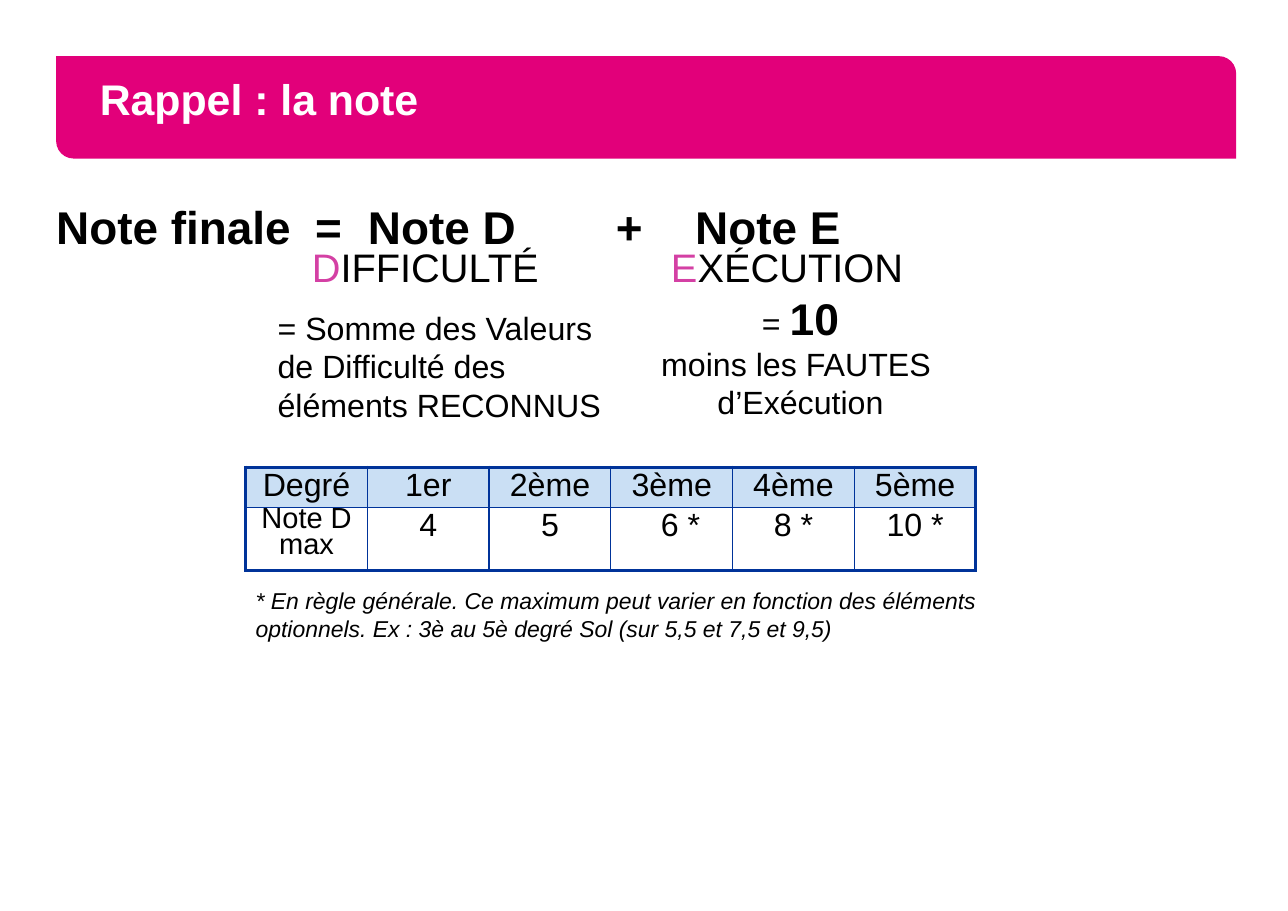
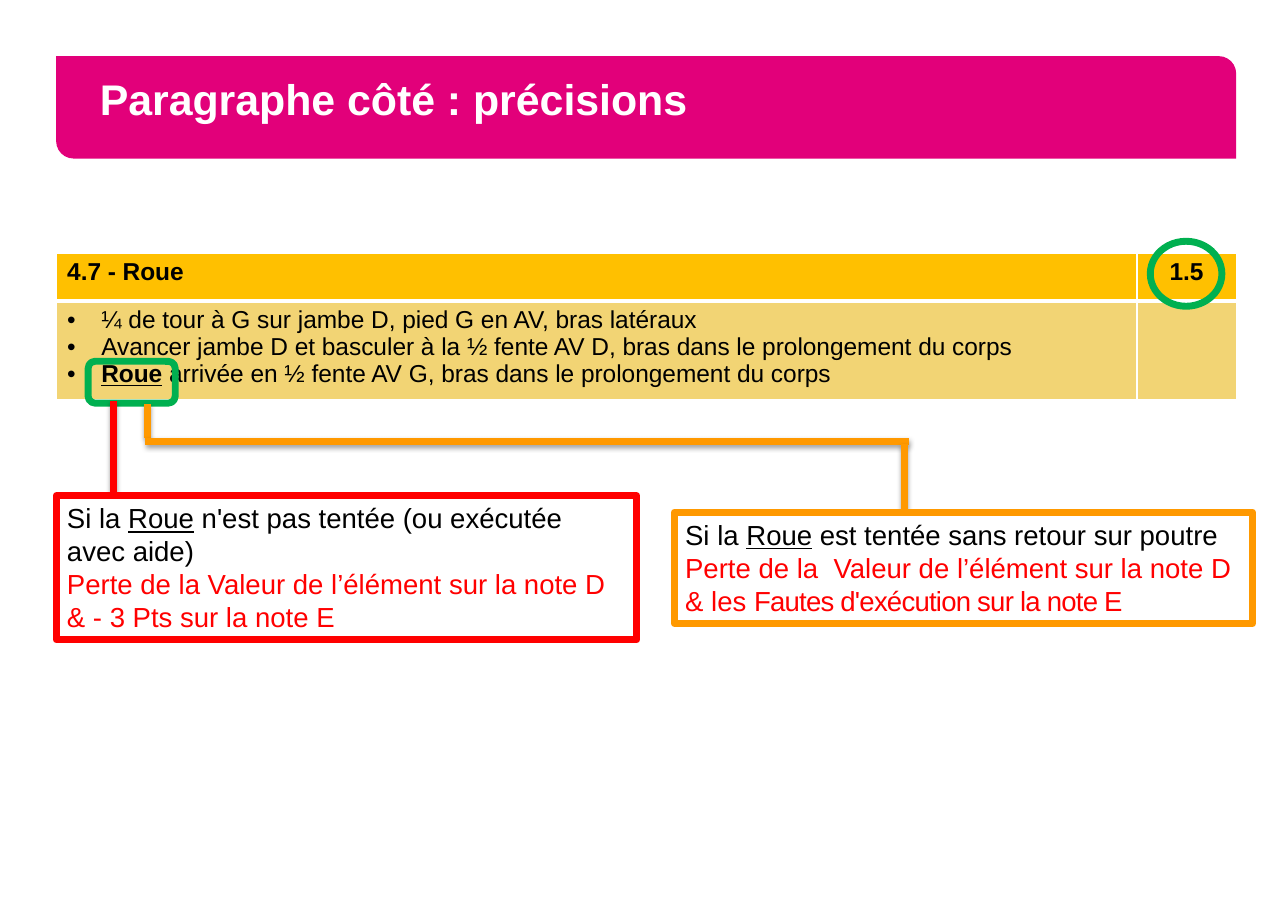
from dataclasses import dataclass, field

from lxml.etree import SubElement
from pptx import Presentation
from pptx.dml.color import RGBColor
from pptx.enum.shapes import MSO_CONNECTOR, MSO_SHAPE
from pptx.enum.text import MSO_ANCHOR, PP_ALIGN
from pptx.oxml.ns import qn
from pptx.util import Inches, Pt


# Theme
@dataclass(frozen=True)
class Theme:
    font: str = "Arial"
    black: str = "000000"
    white: str = "FFFFFF"
    band: str = "E2007A"
    initial: str = "D440A4"
    grid: str = "003399"
    degree_fill: str = "CADFF4"
    element_header: str = "FFC000"
    element_body: str = "F2D474"
    highlight: str = "00B050"
    red: str = "FF0000"
    orange: str = "FF9900"
    title_size: float = 28
    formula_size: float = 30
    term_size: float = 26
    ten_size: float = 29
    body_size: float = 21
    narrow_size: float = 19
    callout_size: float = 18
    element_size: float = 16
    note_size: float = 15
    outline: float = 4.5


THEME = Theme()


# Content types
@dataclass(frozen=True)
class Box:
    left: float
    top: float
    width: float
    height: float

    def lengths(self) -> tuple:
        return tuple(Inches(v) for v in (self.left, self.top, self.width, self.height))


@dataclass(frozen=True)
class Run:
    text: str
    format: dict = field(default_factory=dict)


@dataclass(frozen=True)
class Line:
    runs: tuple[Run, ...]
    align: PP_ALIGN = PP_ALIGN.LEFT
    spacing: object = None
    tabs: tuple[float, ...] = ()
    bullet: bool = False


@dataclass(frozen=True)
class Cell:
    lines: tuple[Line, ...] = ()
    fill: str | None = None
    left_margin: float | None = None


@dataclass(frozen=True)
class Grid:
    color: str
    outer: float
    vertical: float
    horizontal: float


def line(text: str, align: PP_ALIGN = PP_ALIGN.LEFT, spacing=None, bullet: bool = False,
         **text_format) -> Line:
    return Line((Run(text, text_format),), align, spacing, bullet=bullet)


# Text
def add_text(paragraph, text: str, *, size: float = THEME.body_size, color: str = THEME.black,
             bold: bool = False, italic: bool = False, underline: bool = False,
             tracking: float = 0) -> None:
    run = paragraph.add_run()
    run.text = text
    font = run.font
    font.name, font.size = THEME.font, Pt(size)
    font.bold, font.italic, font.underline = bold, italic, underline
    font.color.rgb = RGBColor.from_string(color)
    if tracking:
        run._r.get_or_add_rPr().set("spc", str(round(tracking * 100)))


def write_lines(text_frame, lines: tuple[Line, ...], **defaults) -> None:
    for index, item in enumerate(lines):
        paragraph = text_frame.add_paragraph() if index else text_frame.paragraphs[0]
        properties = paragraph._p.get_or_add_pPr()
        if item.bullet:
            properties.set("marL", str(Inches(0.31)))
            properties.set("indent", str(-Inches(0.31)))
            SubElement(properties, qn("a:buFont"), typeface=THEME.font)
            SubElement(properties, qn("a:buChar"), char="•")
        if item.tabs:
            tab_list = SubElement(properties, qn("a:tabLst"))
            for stop in item.tabs:
                SubElement(tab_list, qn("a:tab"), pos=str(Inches(stop)), algn="l")
        paragraph.alignment = item.align
        if item.spacing:
            paragraph.line_spacing = item.spacing
        for run in item.runs:
            add_text(paragraph, run.text, **{**defaults, **run.format})


def set_margins(text_frame, horizontal: float, vertical: float) -> None:
    text_frame.margin_left = text_frame.margin_right = Inches(horizontal)
    text_frame.margin_top = text_frame.margin_bottom = Inches(vertical)


def add_text_box(slide, box: Box, lines: tuple[Line, ...], margin: float = 0.05,
                 wrap: bool = True, **defaults) -> None:
    text_frame = slide.shapes.add_textbox(*box.lengths()).text_frame
    text_frame.word_wrap = wrap
    set_margins(text_frame, margin, margin)
    write_lines(text_frame, lines, **defaults)


# Shapes and lines
def add_panel(slide, kind: MSO_SHAPE, box: Box, fill: str | None = None,
              outline: str | None = None):
    shape = slide.shapes.add_shape(kind, *box.lengths())
    shape.shadow.inherit = False
    if fill:
        shape.fill.solid()
        shape.fill.fore_color.rgb = RGBColor.from_string(fill)
    else:
        shape.fill.background()
    if outline:
        shape.line.color.rgb = RGBColor.from_string(outline)
        shape.line.width = Pt(THEME.outline)
    else:
        shape.line.fill.background()
    return shape


def add_link(slide, start: tuple[float, float], end: tuple[float, float], color: str) -> None:
    connector = slide.shapes.add_connector(
        MSO_CONNECTOR.STRAIGHT, *(Inches(value) for value in start + end))
    connector.line.color.rgb = RGBColor.from_string(color)
    connector.line.width = Pt(THEME.outline)
    effects = SubElement(connector._element.spPr, qn("a:effectLst"))
    shadow = SubElement(effects, qn("a:outerShdw"), blurRad=str(Pt(3.1)), dist=str(Pt(1.6)),
                        dir="5400000", rotWithShape="0")
    shadow_color = SubElement(shadow, qn("a:srgbClr"), val=THEME.black)
    SubElement(shadow_color, qn("a:alpha"), val="38000")


def add_callout(slide, box: Box, outline: str, lines: tuple[Line, ...]) -> None:
    text_frame = add_panel(slide, MSO_SHAPE.RECTANGLE, box, THEME.white, outline).text_frame
    text_frame.word_wrap = True
    text_frame.vertical_anchor = MSO_ANCHOR.TOP
    write_lines(text_frame, lines, size=THEME.callout_size)


# Tables
def add_grid_table(slide, left: float, top: float, widths: list[float], heights: list[float],
                   rows: list[list[Cell]], grid: Grid, margins: tuple[float, float],
                   **defaults) -> None:
    box = Box(left, top, sum(widths), sum(heights))
    table = slide.shapes.add_table(len(rows), len(widths), *box.lengths()).table
    table.first_row = table.horz_banding = False
    for column, width in zip(table.columns, widths):
        column.width = Inches(width)
    for row, height in zip(table.rows, heights):
        row.height = Inches(height)
    for r, cells in enumerate(rows):
        for c, content in enumerate(cells):
            cell = table.cell(r, c)
            set_margins(cell, *margins)
            if content.left_margin is not None:
                cell.margin_left = Inches(content.left_margin)
            borders = {
                "a:lnL": grid.vertical if c else grid.outer,
                "a:lnR": grid.vertical if c < len(widths) - 1 else grid.outer,
                "a:lnT": grid.horizontal if r else grid.outer,
                "a:lnB": grid.horizontal if r < len(rows) - 1 else grid.outer,
            }
            for tag, width in borders.items():
                border = SubElement(cell._tc.get_or_add_tcPr(), qn(tag), w=str(Pt(width)))
                solid = SubElement(border, qn("a:solidFill"))
                SubElement(solid, qn("a:srgbClr"), val=grid.color)
            if content.fill:
                cell.fill.solid()
                cell.fill.fore_color.rgb = RGBColor.from_string(content.fill)
            else:
                cell.fill.background()
            write_lines(cell.text_frame, content.lines, **defaults)


# Slides
def add_titled_slide(presentation, title: str):
    slide = presentation.slides.add_slide(presentation.slide_layouts[6])
    band = add_panel(slide, MSO_SHAPE.ROUND_2_DIAG_RECTANGLE,
                     Box(0.51, 0.51, 10.71, 0.93), THEME.band)
    band.adjustments[0], band.adjustments[1] = 0, 0.17
    text_frame = band.text_frame
    text_frame.word_wrap = True
    text_frame.vertical_anchor = MSO_ANCHOR.MIDDLE
    set_margins(text_frame, 0.35, 0.05)
    write_lines(text_frame, (line(title, spacing=Pt(22)),), size=THEME.title_size,
                color=THEME.white, bold=True)
    return slide


def build_score_slide(presentation) -> None:
    slide = add_titled_slide(presentation, "Rappel : la note")
    center = PP_ALIGN.CENTER

    # Formula and its two terms
    term = {"size": THEME.term_size}
    initial = {**term, "color": THEME.initial}
    add_text_box(slide, Box(0.51, 1.97, 10.72, 0.7), (
        Line((Run("Note finale\t=\tNote D\t+\tNote E",
                  {"size": THEME.formula_size, "bold": True}),),
             spacing=Pt(24), tabs=(2.35, 2.83, 5.08, 5.8)),
        Line((Run("\t", term), Run("D", initial), Run("IFFICULTÉ\t", term),
              Run("E", initial), Run("XÉCUTION", term)),
             spacing=Pt(24), tabs=(2.32, 5.58)),
    ), margin=0)
    add_text_box(slide, Box(2.47, 2.75, 3.07, 1.16), tuple(
        line(text) for text in ("= Somme des Valeurs", "de Difficulté des",
                                "éléments RECONNUS")), wrap=False)
    add_text_box(slide, Box(5.94, 2.59, 2.65, 1.3), (
        Line((Run("= "), Run("10", {"size": THEME.ten_size, "bold": True})), center),
        line("moins les FAUTES ", center),
        line("d’Exécution", center),
    ), wrap=False)

    # Highest D score for each degree
    degrees = ("Degré", "1er", "2ème", "3ème", "4ème", "5ème")
    header = [Cell((line(text, center),), THEME.degree_fill) for text in degrees]
    scores = [Cell((line("Note D max", center, spacing=0.8, size=THEME.narrow_size),))]
    scores += [Cell((line(text, center),), left_margin=margin) for text, margin in
               (("4", 0), ("5", 0), ("6 *", 0.16), ("8 *", 0), ("10 *", 0))]
    add_grid_table(slide, 2.23, 4.24, [6.63 / len(degrees)] * len(degrees), [0.37, 0.57],
                   [header, scores], Grid(THEME.grid, 2.25, 1, 1), (0, 0))
    add_text_box(slide, Box(2.27, 5.28, 6.78, 0.61), (
        line("* En règle générale. Ce maximum peut varier en fonction des éléments "
             "optionnels. Ex : 3è au 5è degré Sol (sur 5,5 et 7,5 et 9,5)"),
    ), size=THEME.note_size, italic=True)


def build_precision_slide(presentation) -> None:
    slide = add_titled_slide(presentation, "Paragraphe côté : précisions")

    # Element and its value
    steps = (
        line("¼ de tour à G sur jambe D, pied G en AV, bras latéraux", bullet=True),
        line("Avancer jambe D et basculer à la ½ fente AV D, bras dans le prolongement du corps",
             bullet=True),
        Line((Run("Roue", {"bold": True, "underline": True}),
              Run(" arrivée en ½ fente AV G, bras dans le prolongement du corps")), bullet=True),
    )
    add_grid_table(slide, 0.51, 2.3, [9.81, 0.9], [0.43, 0.9], [
        [Cell((line("4.7 - Roue", bold=True),), THEME.element_header),
         Cell((line("1.5", PP_ALIGN.CENTER, bold=True),), THEME.element_header)],
        [Cell(steps, THEME.element_body), Cell(fill=THEME.element_body)],
    ], Grid(THEME.white, 1, 1, 3), (0.1, 0.05), size=THEME.element_size)

    # Highlights
    add_panel(slide, MSO_SHAPE.ROUNDED_RECTANGLE, Box(0.8, 3.28, 0.79, 0.38),
              outline=THEME.highlight)
    add_panel(slide, MSO_SHAPE.OVAL, Box(10.44, 2.19, 0.65, 0.59), outline=THEME.highlight)

    # Links to the callouts
    for start, end, color in (
        ((1.03, 3.64), (1.03, 4.5), THEME.red),
        ((1.34, 3.67), (1.34, 3.98), THEME.orange),
        ((1.32, 4.01), (8.25, 4.01), THEME.orange),
        ((8.21, 4.03), (8.21, 4.63), THEME.orange),
    ):
        add_link(slide, start, end, color)

    # Callouts
    opening = (Run("Si la "), Run("Roue", {"underline": True}))
    red = {"color": THEME.red}
    add_callout(slide, Box(0.51, 4.5, 5.27, 1.31), THEME.red, (
        Line(opening + (Run(" n'est pas tentée (ou exécutée avec aide)"),)),
        line("Perte de la Valeur de l’élément sur la note D & - 3 Pts sur la note E", **red),
    ))
    add_callout(slide, Box(6.12, 4.65, 5.25, 1.01), THEME.orange, (
        Line(opening + (Run(" est tentée sans retour sur poutre"),)),
        line("Perte de la  Valeur de l’élément sur la note D", **red),
        Line((Run("& les ", red),
              Run("Fautes d'exécution sur la note E", {**red, "tracking": -0.5}))),
    ))


def main() -> None:
    presentation = Presentation()
    presentation.slide_width, presentation.slide_height = Inches(11.69), Inches(8.27)
    build_score_slide(presentation)
    build_precision_slide(presentation)
    presentation.save("out.pptx")


if __name__ == "__main__":
    main()
